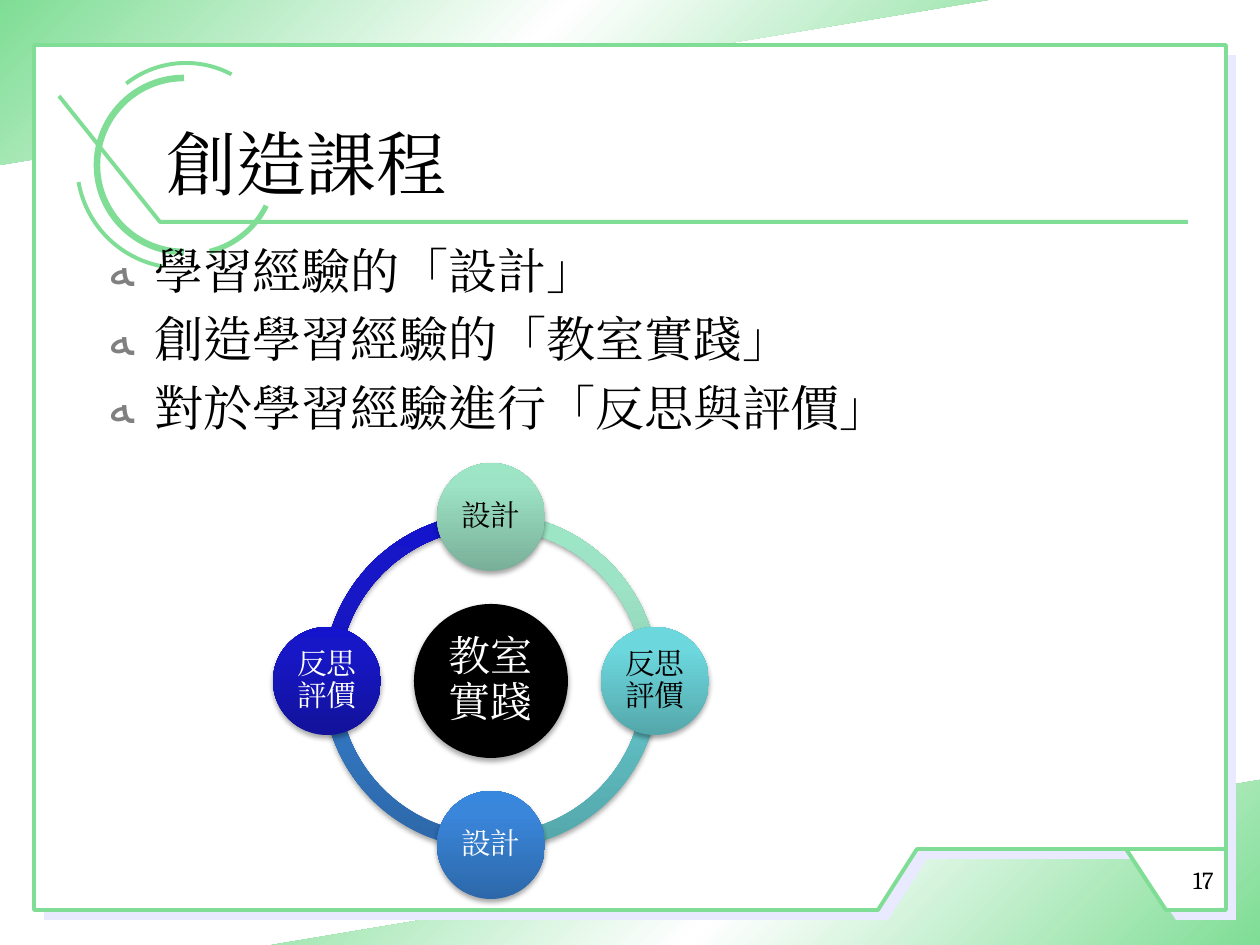
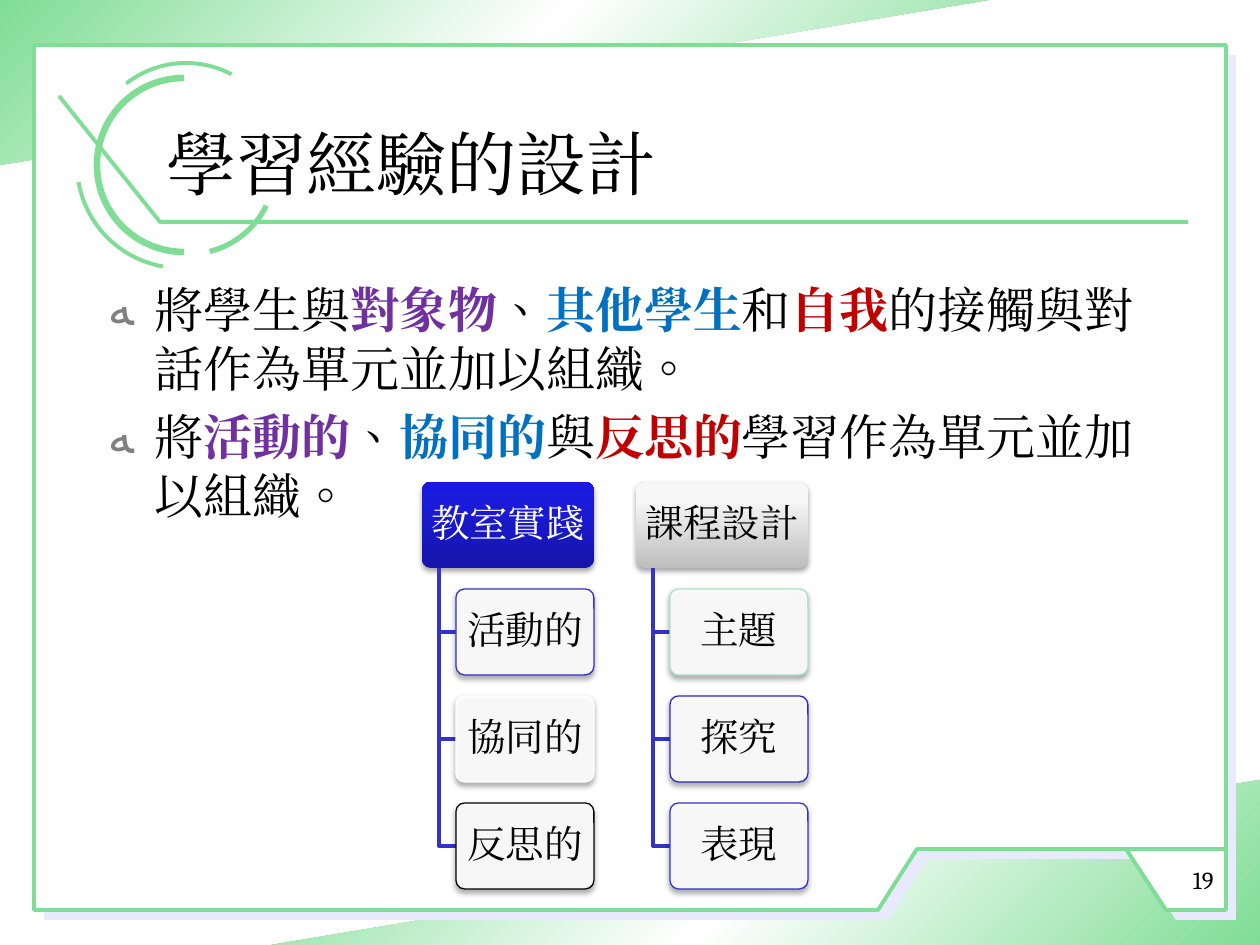
import math

from lxml import etree
from pptx import Presentation
from pptx.dml.color import RGBColor
from pptx.enum.shapes import MSO_SHAPE
from pptx.enum.text import MSO_ANCHOR, MSO_AUTO_SIZE, PP_ALIGN
from pptx.oxml.ns import qn
from pptx.util import Pt

SCALE = 914400 / 126
FONT = "Cambria"
ARC, BLOCK_ARC, OVAL = MSO_SHAPE.ARC, MSO_SHAPE.BLOCK_ARC, MSO_SHAPE.OVAL
TRIANGLE, ROUNDED = MSO_SHAPE.RIGHT_TRIANGLE, MSO_SHAPE.ROUNDED_RECTANGLE
LEFT, CENTER, RIGHT = PP_ALIGN.LEFT, PP_ALIGN.CENTER, PP_ALIGN.RIGHT
MIDDLE = MSO_ANCHOR.MIDDLE
NO_AUTOFIT = MSO_AUTO_SIZE.NONE

COLORS = {
    "green": "7FDD95", "lavender": "E9E9FF", "white": "FFFFFF", "black": "000000",
    "bullet": "808080", "purple": "7030A0", "blue": "0070C0", "red": "C00000",
    "indigo": "3333CC", "dark_indigo": "2D2DB9", "mint": "AAE2CA",
}
GRADIENTS = {
    "band": ((0, "7FDD95"), (50, "FFFFFF"), (100, "7FDD95")),
    "mint": ((0, "79AF98"), (80, "9DE3C5"), (100, "9CE6C6")),
    "aqua": ((0, "54A7AB"), (80, "6CD8DE"), (100, "6BDBE1")),
    "azure": ((0, "2C68A9"), (80, "3A86DB"), (100, "3787DF")),
    "navy": ((0, "12129A"), (80, "1717C8"), (100, "1414CC")),
    "royal": ((0, "1515A9"), (80, "1B1BDC"), (100, "1818E1")),
    "silver": ((0, "BEBEBE"), (80, "F7F7F7"), (100, "F8F8F8")),
}


def px(value):
    return round(value * SCALE)


def color(name):
    return RGBColor.from_string(COLORS[name])


def add_xml(parent, tag, **attributes):
    child = etree.SubElement(parent, qn(tag))
    for name, value in attributes.items():
        child.set(name, str(value))
    return child


def style(shape, fill=None, line=None, width=0.75):
    shape.shadow.inherit = False
    if fill:
        shape.fill.solid()
        shape.fill.fore_color.rgb = color(fill)
    else:
        shape.fill.background()
    if line:
        shape.line.color.rgb = color(line)
        shape.line.width = Pt(width)
    else:
        shape.line.fill.background()


def set_gradient(shape, name, angle=90):
    shape.fill.gradient()
    shape.fill.gradient_angle = angle
    stops = shape.element.spPr.find(".//" + qn("a:gsLst"))
    for stop in list(stops):
        stops.remove(stop)
    for position, value in GRADIENTS[name]:
        stop = add_xml(stops, "a:gs", pos=position * 1000)
        add_xml(stop, "a:srgbClr", val=value)


def add_shadow(shape):
    effects = shape.element.spPr.find(qn("a:effectLst"))
    shadow = add_xml(effects, "a:outerShdw", blurRad=Pt(3.1), dist=Pt(1.8),
                     dir=5400000, rotWithShape=0)
    add_xml(add_xml(shadow, "a:srgbClr", val=COLORS["black"]), "a:alpha", val=35000)


def add_preset(slide, kind, box, **look):
    shape = slide.shapes.add_shape(kind, *map(px, box))
    style(shape, **look)
    return shape


def add_outline(slide, points, close=False, **look):
    builder = slide.shapes.build_freeform(*points[0], scale=SCALE)
    builder.add_line_segments(points[1:], close=close)
    shape = builder.convert_to_shape()
    style(shape, **look)
    return shape


def add_run(paragraph, text, size, ink="black", bold=None):
    run = paragraph.add_run()
    run.text = text
    run.font.size = Pt(size)
    run.font.bold = bold
    run.font.color.rgb = color(ink)
    run.font.name = FONT
    properties = run._r.get_or_add_rPr()
    properties.set("lang", "zh-TW")
    add_xml(properties, "a:ea", typeface=FONT)


def add_label(shape, text, size, ink):
    frame = shape.text_frame
    frame.word_wrap = True
    frame.vertical_anchor = MIDDLE
    frame.margin_left = frame.margin_right = px(3)
    frame.margin_top = frame.margin_bottom = px(3)
    paragraph = frame.paragraphs[0]
    paragraph.alignment = CENTER
    paragraph.line_spacing = 0.9
    add_run(paragraph, text, size, ink)


def place(shape, box):
    shape.left, shape.top, shape.width, shape.height = map(px, box)


def draw_bands(slide, width, height):
    band_width, band_height = 988, 165
    corners = (("flipH", width - band_width, height - band_height), ("flipV", 0, 0))
    bands = []
    for flip, left, top in corners:
        band = add_preset(slide, TRIANGLE, (left, top, band_width, band_height))
        set_gradient(band, "band", 45)
        band.element.spPr.xfrm.set(flip, "1")
        bands.append(band)
    return bands


def draw_page(slide, left, top, width, height):
    right, bottom = left + width, top + height
    notch = bottom - 61
    fold = [(right - 100, notch), (right - 60, bottom), (right, bottom), (right, notch)]
    sheet = [(left, top), (left, bottom), (left + 844, bottom),
             (left + 883, notch), (right, notch), (right, top)]
    parts = []
    for offset, look in ((10, {"fill": "lavender"}),
                         (0, {"fill": "white", "line": "green", "width": 2.25})):
        for outline in (fold, sheet):
            points = [(x + offset, y + offset) for x, y in outline]
            parts.append(add_outline(slide, points, True, **look))
    return parts


def draw_ornament(slide, left, top):
    rule = [(left, top), (left + 101, top + 126), (left + 1129, top + 126)]
    parts = [add_outline(slide, rule, line="green", width=2.25)]
    arcs = (
        (122, 68, 104, 100, 170, 2.25),
        (127, 64, 97, 232, 298, 2.25),
        (125, 69, 87, 90, 270, 3.75),
        (130, 72, 86, 26, 76, 3),
    )
    for x, y, radius, start, end, width in arcs:
        box = (left + x - radius, top + y - radius, 2 * radius, 2 * radius)
        arc = add_preset(slide, ARC, box, line="green", width=width)
        arc.adjustments[0] = start * 0.6
        arc.adjustments[1] = end * 0.6
        parts.append(arc)
    return parts


def move_to_layout(shapes, layout):
    tree = layout.shapes.element
    for index, shape in enumerate(shapes):
        shape.element.xpath(".//p:cNvPr")[0].set("id", str(100 + index))
        tree.insert(2 + index, shape.element)


def fill_title(slide, text):
    title = slide.shapes.title
    place(title, (154, 84, 1012, 158))
    frame = title.text_frame
    frame.auto_size = NO_AUTOFIT
    frame.vertical_anchor = MIDDLE
    frame.paragraphs[0].alignment = LEFT
    add_run(frame.paragraphs[0], text, 40)


def fill_list(slide, top, items):
    body = slide.placeholders[1]
    place(body, (95, top, 1071, 567))
    frame = body.text_frame
    frame.auto_size = NO_AUTOFIT
    for index, runs in enumerate(items):
        paragraph = frame.add_paragraph() if index else frame.paragraphs[0]
        properties = paragraph._p.get_or_add_pPr()
        add_xml(add_xml(properties, "a:buClr"), "a:srgbClr", val=COLORS["bullet"])
        add_xml(properties, "a:buChar", char="ﻪ")
        for text, ink in runs:
            add_run(paragraph, text, 28, ink, bold=ink != "black")


def add_number(slide, text):
    box = slide.shapes.add_textbox(*map(px, (1137, 859, 89, 48)))
    box.text_frame.word_wrap = True
    paragraph = box.text_frame.paragraphs[0]
    paragraph.alignment = RIGHT
    add_run(paragraph, text, 14)


def draw_cycle(slide, left, top, size, hub_text, nodes):
    node_size, hub_size, ring_size = 108, 154, 336
    orbit = (size - node_size) // 2
    center_x, center_y = left + size // 2, top + size // 2

    def centered(x, y, extent):
        return (x - extent // 2, y - extent // 2, extent, extent)

    step = 360 // len(nodes)
    angles = [(270 + step * index) % 360 for index in range(len(nodes))]
    for angle, (_, gradient, _) in reversed(list(zip(angles, nodes))):
        arc = add_preset(slide, BLOCK_ARC, centered(center_x, center_y, ring_size))
        arc.adjustments[0] = angle * 0.6
        arc.adjustments[1] = (angle + step) % 360 * 0.6
        arc.adjustments[2] = 0.046
        set_gradient(arc, gradient)
        add_shadow(arc)
    hub = add_preset(slide, OVAL, centered(center_x, center_y, hub_size), fill="black")
    add_shadow(hub)
    add_label(hub, hub_text, 24, "white")
    for angle, (text, gradient, ink) in zip(angles, nodes):
        x = center_x + round(orbit * math.cos(math.radians(angle)))
        y = center_y + round(orbit * math.sin(math.radians(angle)))
        node = add_preset(slide, OVAL, centered(x, y, node_size))
        set_gradient(node, gradient)
        add_shadow(node)
        add_label(node, text, 17, ink)


def draw_branch(slide, left, top, heading, gradient, ink, children):
    width, height, pitch, indent = 172, 86, 107, 34
    head = add_preset(slide, ROUNDED, (left, top, width, height))
    head.adjustments[0] = 0.1
    set_gradient(head, gradient)
    add_shadow(head)
    add_label(head, heading, 22, ink)
    stem = left + indent // 2
    for index, (text, line) in enumerate(children, 1):
        child_top = top + pitch * index
        middle = child_top + height // 2
        elbow = [(stem, top + height), (stem, middle), (left + indent, middle)]
        add_outline(slide, elbow, line="indigo", width=2)
        box = (left + indent, child_top, width - indent, height)
        child = add_preset(slide, ROUNDED, box, fill="white", line=line)
        child.adjustments[0] = 0.1
        paint = child.element.spPr.find(qn("a:solidFill"))
        add_xml(paint[0], "a:alpha", val=90000)
        add_shadow(child)
        add_label(child, text, 22, "black")


def build_curriculum_slide(slide):
    fill_title(slide, "創造課程")
    fill_list(slide, 234, [
        [("學習經驗的「設計」", "black")],
        [("創造學習經驗的「教室實踐」", "black")],
        [("對於學習經驗進行「反思與評價」", "black")],
    ])
    draw_cycle(slide, 273, 463, 436, "教室實踐", [
        ("設計", "mint", "black"),
        ("反思評價", "aqua", "black"),
        ("設計", "azure", "white"),
        ("反思評價", "navy", "white"),
    ])
    add_number(slide, "17")


def build_experience_slide(slide):
    fill_title(slide, "學習經驗的設計")
    fill_list(slide, 273, [
        [("將學生與", "black"), ("對象物", "purple"), ("、", "black"),
         ("其他學生", "blue"), ("和", "black"), ("自我", "red"),
         ("的接觸與對話作為單元並加以組織。", "black")],
        [("將", "black"), ("活動的", "purple"), ("、", "black"),
         ("協同的", "blue"), ("與", "black"), ("反思的", "red"),
         ("學習作為單元並加以組織。", "black")],
    ])
    draw_branch(slide, 422, 482, "教室實踐", "royal", "white",
                [("活動的", "indigo"), ("協同的", "white"), ("反思的", "black")])
    draw_branch(slide, 636, 482, "課程設計", "silver", "black",
                [("主題", "mint"), ("探究", "dark_indigo"), ("表現", "indigo")])
    add_number(slide, "19")


def main():
    presentation = Presentation()
    presentation.slide_width, presentation.slide_height = px(1260), px(945)
    layout = presentation.slide_layouts[1]
    slides = [presentation.slides.add_slide(layout) for _ in range(2)]
    decor = draw_bands(slides[0], 1260, 945)
    decor += draw_page(slides[0], 34, 45, 1192, 865)
    decor += draw_ornament(slides[0], 59, 96)
    move_to_layout(decor, layout)
    build_curriculum_slide(slides[0])
    build_experience_slide(slides[1])
    presentation.save("out.pptx")


if __name__ == "__main__":
    main()
